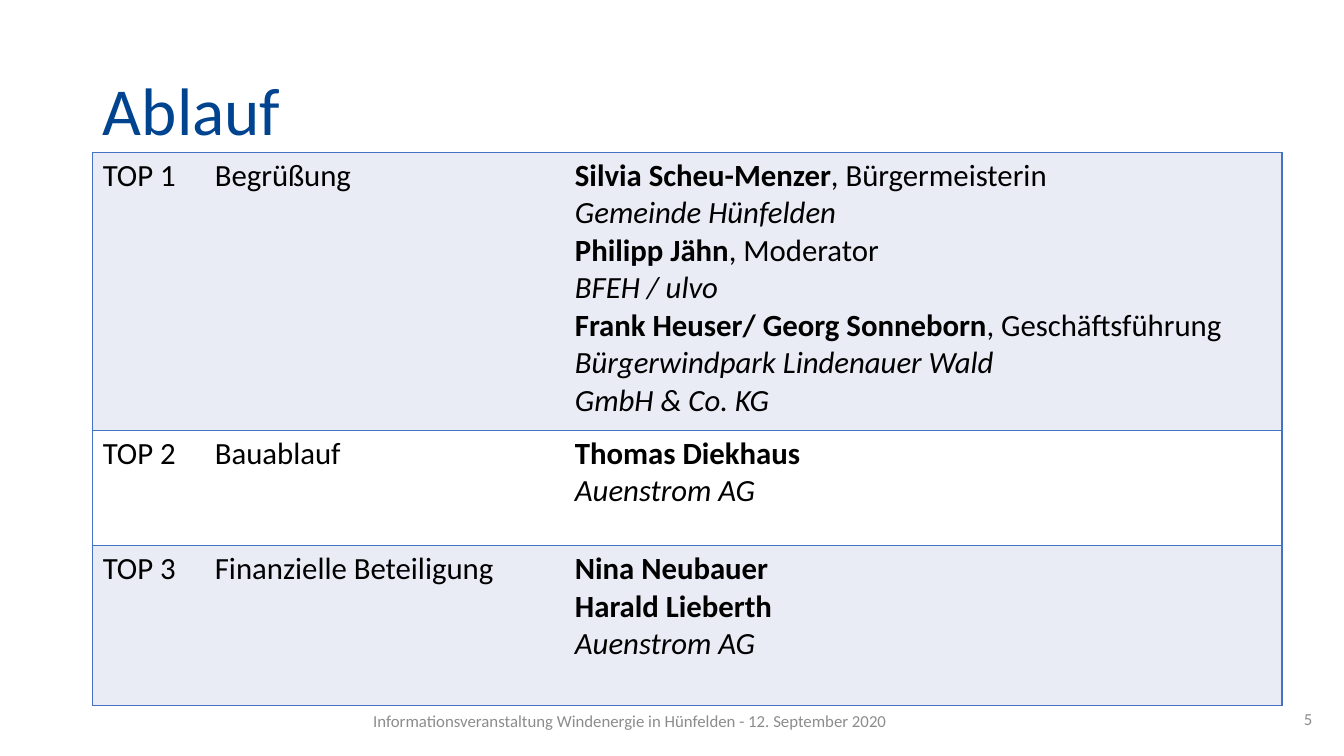
from lxml.etree import SubElement
from pptx import Presentation
from pptx.dml.color import RGBColor
from pptx.enum.text import MSO_ANCHOR, PP_ALIGN
from pptx.oxml.ns import qn
from pptx.util import Pt

# Content: each cell is a list of paragraphs, each of (text, style) pieces
TITLE = "Ablauf"
FOOT = "Informationsveranstaltung Windenergie in Hünfelden - 12. September 2020"
PAGE = "5"
ROWS = [
    ("TOP 1", "Begrüßung", [
        [("Silvia Scheu-Menzer", "b"), (", Bürgermeisterin\n", ""),
         ("Gemeinde Hünfelden", "i")],
        [("Philipp Jähn", "b"), (", Moderator\n", ""),
         ("BFEH / ulvo", "i")],
        [("Frank Heuser/ Georg Sonneborn", "b"), (", Geschäftsführung\n", ""),
         ("Bürgerwindpark Lindenauer Wald\nGmbH & Co. KG", "i")],
    ]),
    ("TOP 2", "Bauablauf", [
        [("Thomas Diekhaus", "b")],
        [("Auenstrom AG", "i")],
    ]),
    ("TOP 3", "Finanzielle Beteiligung", [
        [("Nina Neubauer", "b")],
        [("Harald Lieberth", "b")],
        [("Auenstrom AG", "i")],
    ]),
]
COLORS = {"title": "00438F", "text": "000000", "foot": "8C8C8C",
          "line": "4472C4", "band": "E9EBF5", "plain": "FFFFFF"}
FONT = "Calibri"
NO_STYLE = "{2D5ABB26-0587-4C30-8999-92F81FD0307C}"

# Geometry in points
LEFT, TOP = 66.3, 108.7
WIDTHS = [80, 257.2, 512.2]
HEIGHTS = [198.6, 82.5, 114.3]


def style(run, size, color, kind=""):
    font = run.font
    font.name, font.size = FONT, Pt(size)
    font.color.rgb = RGBColor.from_string(COLORS[color])
    font.bold, font.italic = kind == "b", kind == "i"


def border(cell, sides):
    props = cell._tc.get_or_add_tcPr()
    for side in "LRTB":
        shown = side in sides
        line = SubElement(props, qn("a:ln" + side), w=str(Pt(1 if shown else 0)))
        if shown:
            fill = SubElement(line, qn("a:solidFill"))
            SubElement(fill, qn("a:srgbClr"), val=COLORS["line"])
        else:
            SubElement(line, qn("a:noFill"))


def write(frame, paras):
    for i, parts in enumerate(paras):
        para = frame.add_paragraph() if i else frame.paragraphs[0]
        for text, kind in parts:
            for j, line in enumerate(text.split("\n")):
                if j:
                    para.add_line_break()
                if line:
                    run = para.add_run()
                    run.text = line
                    style(run, 22, "text", kind)


def label(slide, text, box, align):
    frame = slide.shapes.add_textbox(*map(Pt, box)).text_frame
    frame.word_wrap = True
    frame.vertical_anchor = MSO_ANCHOR.MIDDLE
    frame.text = text
    para = frame.paragraphs[0]
    para.alignment = align
    style(para.runs[0], 12, "foot")


def main():
    deck = Presentation()
    deck.slide_width, deck.slide_height = Pt(960), Pt(540)
    slide = deck.slides.add_slide(deck.slide_layouts[5])

    # Title
    title = slide.shapes.title
    title.left, title.top, title.width, title.height = map(
        Pt, (LEFT, 28.8, 828, 104.4))
    frame = title.text_frame
    frame.text = TITLE
    frame.vertical_anchor = MSO_ANCHOR.MIDDLE
    para = frame.paragraphs[0]
    para.alignment, para.line_spacing = PP_ALIGN.LEFT, 0.9
    style(para.runs[0], 48, "title")

    # Agenda table
    table = slide.shapes.add_table(
        len(ROWS), len(WIDTHS), Pt(LEFT), Pt(TOP),
        Pt(sum(WIDTHS)), Pt(sum(HEIGHTS))).table
    table.first_row = table.horz_banding = False
    table._tbl.tblPr.find(qn("a:tableStyleId")).text = NO_STYLE
    for col, width in zip(table.columns, WIDTHS):
        col.width = Pt(width)
    for r, (top, topic, people) in enumerate(ROWS):
        table.rows[r].height = Pt(HEIGHTS[r])
        cells = [[[(top, "")]], [[(topic, "")]], people]
        for c, paras in enumerate(cells):
            cell = table.cell(r, c)
            border(cell, ("LTB", "TB", "RTB")[c])
            cell.fill.solid()
            cell.fill.fore_color.rgb = RGBColor.from_string(
                COLORS["plain" if r % 2 else "band"])
            write(cell.text_frame, paras)

    # Footer and page number
    label(slide, FOOT, (257.8, 500.4, 384.5, 28.8), PP_ALIGN.CENTER)
    label(slide, PAGE, (728.6, 499, 216, 28.8), PP_ALIGN.RIGHT)

    deck.save("out.pptx")


if __name__ == "__main__":
    main()
